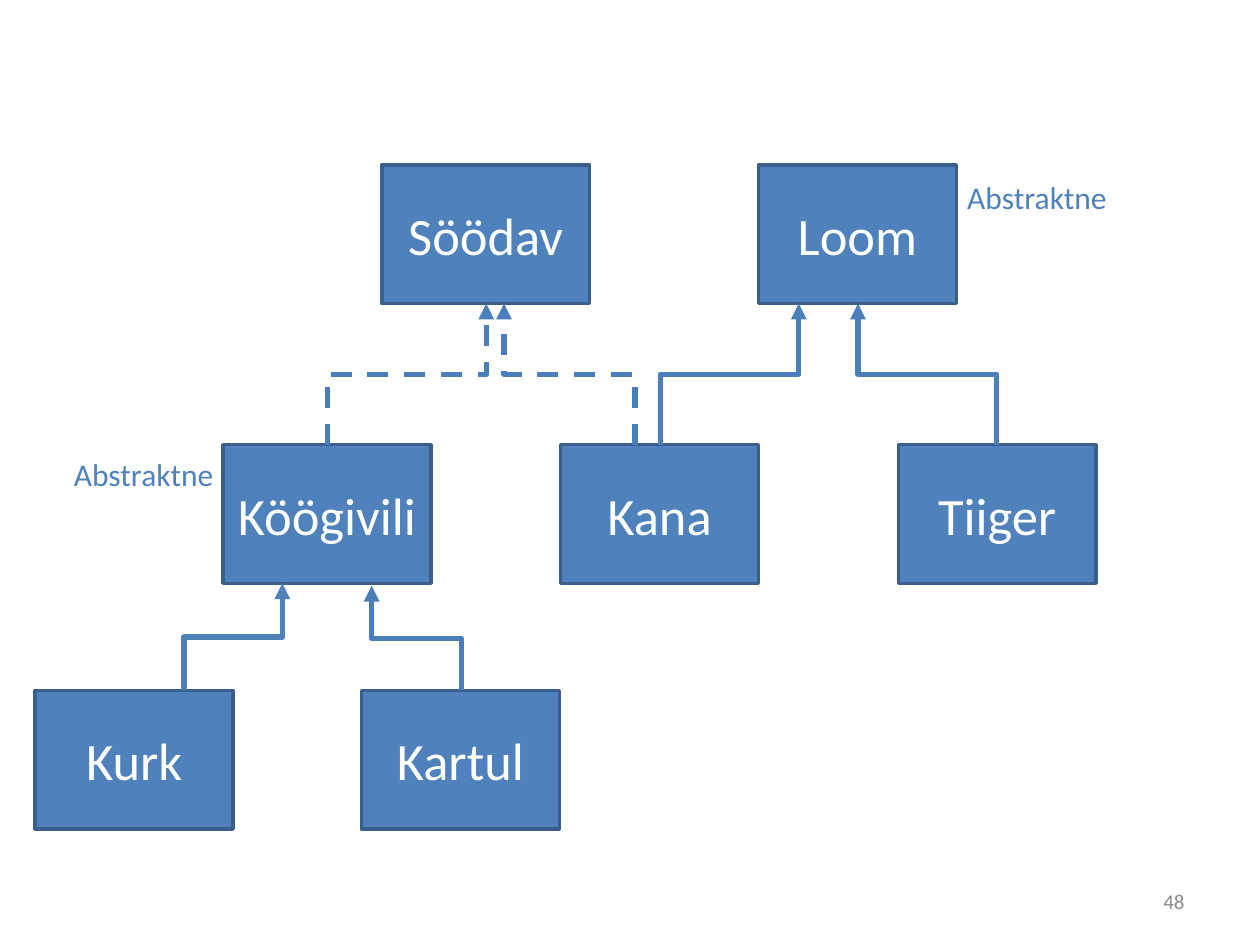
from lxml.etree import SubElement
from pptx import Presentation
from pptx.dml.color import RGBColor
from pptx.enum.dml import MSO_LINE
from pptx.enum.shapes import MSO_CONNECTOR, MSO_SHAPE
from pptx.enum.text import MSO_ANCHOR, PP_ALIGN
from pptx.oxml.ns import qn
from pptx.util import Inches, Pt

BLUE = RGBColor(0x4F, 0x81, 0xBD)
DARK_BLUE = RGBColor(0x3A, 0x5F, 0x8C)
ARROW_BLUE = RGBColor(0x4B, 0x7E, 0xBC)
WHITE = RGBColor(0xFF, 0xFF, 0xFF)
GRAY = RGBColor(0x8C, 0x8C, 0x8C)


def write(shape, text, size, color, align=PP_ALIGN.CENTER):
    frame = shape.text_frame
    frame.word_wrap = True
    frame.vertical_anchor = MSO_ANCHOR.MIDDLE
    paragraph = frame.paragraphs[0]
    paragraph.text = text
    paragraph.alignment = align
    paragraph.font.name = "Calibri"
    paragraph.font.size = Pt(size)
    paragraph.font.color.rgb = color


def add_box(kind, text, left, top, width, height, size, fill, outline, color):
    box = slide.shapes.add_shape(
        kind, Inches(left), Inches(top), Inches(width), Inches(height))
    box.shadow.inherit = False
    box.fill.solid()
    box.fill.fore_color.rgb = fill
    box.line.color.rgb = outline
    box.line.width = Pt(2)
    write(box, text, size, color)


prs = Presentation()
prs.slide_width, prs.slide_height = Inches(10), Inches(7.5)
slide = prs.slides.add_slide(prs.slide_layouts[6])

for left, top in [(7.52, 1.31), (0.43, 3.51)]:
    add_box(MSO_SHAPE.ROUNDED_RECTANGLE, "Abstraktne", left, top, 1.42, 0.51,
            18, WHITE, WHITE, BLUE)

page_number = slide.shapes.add_textbox(
    Inches(7.17), Inches(6.95), Inches(2.33), Inches(0.4))
write(page_number, "48", 12, GRAY, PP_ALIGN.RIGHT)

TOP_ROW, MIDDLE_ROW, BOTTOM_ROW = 1.31, 3.53, 5.48
NARROW, WIDE, HEIGHT = 1.57, 1.65, 1.1
classes = [
    ("Söödav", 3.03, TOP_ROW, WIDE),
    ("Loom", 6.02, TOP_ROW, NARROW),
    ("Tiiger", 7.13, MIDDLE_ROW, NARROW),
    ("Kana", 4.45, MIDDLE_ROW, NARROW),
    ("Köögivili", 1.77, MIDDLE_ROW, WIDE),
    ("Kurk", 0.28, BOTTOM_ROW, NARROW),
    ("Kartul", 2.87, BOTTOM_ROW, NARROW),
]
for name, left, top, width in classes:
    add_box(MSO_SHAPE.RECTANGLE, name, left, top, width, HEIGHT,
            30, BLUE, DARK_BLUE, WHITE)

TOP_EDGE, MIDDLE_EDGE = TOP_ROW + HEIGHT, MIDDLE_ROW + HEIGHT
inheritance = [
    (7.91, MIDDLE_ROW, 6.81, TOP_EDGE, False, ARROW_BLUE),
    (5.24, MIDDLE_ROW, 6.34, TOP_EDGE, False, ARROW_BLUE),
    (5.04, MIDDLE_ROW, 4.00, TOP_EDGE, True, ARROW_BLUE),
    (2.60, MIDDLE_ROW, 3.86, TOP_EDGE, True, ARROW_BLUE),
    (3.66, BOTTOM_ROW, 2.95, MIDDLE_EDGE + 0.02, False, ARROW_BLUE),
    (1.46, BOTTOM_ROW, 2.24, MIDDLE_EDGE, False, BLUE),
]
for child_x, child_y, parent_x, parent_y, dashed, color in inheritance:
    center_x, center_y = (child_x + parent_x) / 2, (child_y + parent_y) / 2
    half_rise, half_run = (child_y - parent_y) / 2, abs(parent_x - child_x) / 2
    arrow = slide.shapes.add_connector(
        MSO_CONNECTOR.ELBOW,
        Inches(center_x - half_rise), Inches(center_y - half_run),
        Inches(center_x + half_rise), Inches(center_y + half_run))
    arrow.line.color.rgb = color
    arrow.line.width = Pt(3)
    if dashed:
        arrow.line.dash_style = MSO_LINE.DASH
    properties = arrow._element.spPr
    turn = properties.find(qn("a:xfrm"))
    rightward = parent_x > child_x
    turn.set("rot", str((90 if rightward else 270) * 60000))
    turn.set("flipV", "1")
    if rightward:
        turn.set("flipH", "1")
    SubElement(properties.find(qn("a:ln")), qn("a:tailEnd"), type="triangle")
    SubElement(properties, qn("a:effectLst"))

prs.save("out.pptx")
